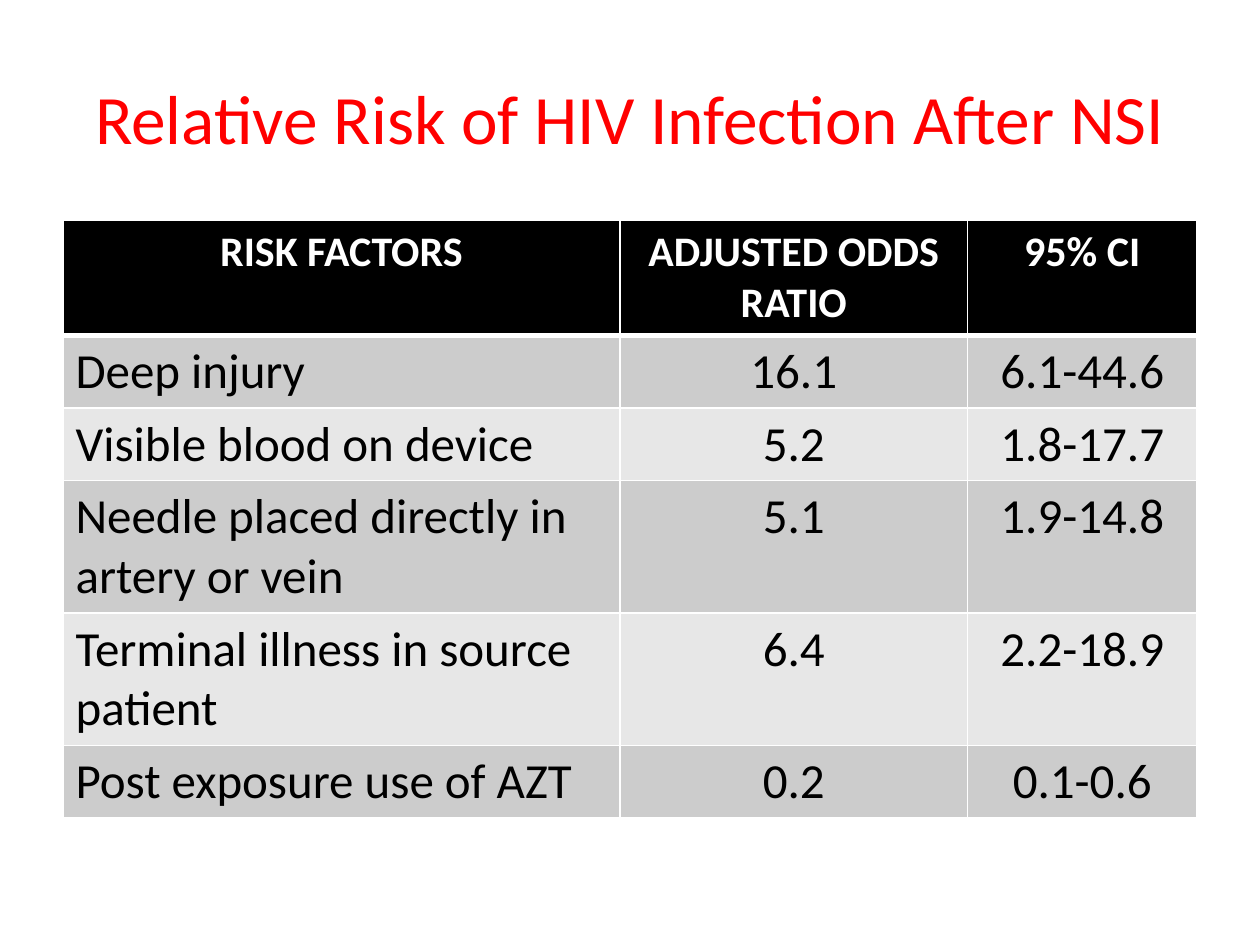
from dataclasses import dataclass

from lxml import etree
from pptx import Presentation
from pptx.dml.color import RGBColor
from pptx.enum import text
from pptx.oxml import ns
from pptx.table import _Cell
from pptx.util import Inches, Pt

FONT = "Calibri"
COLORS = {
    "title": "FF0000",
    "header": "000000",
    "band_dark": "CCCCCC",
    "band_light": "E7E7E7",
    "text": "000000",
    "white": "FFFFFF",
}
COLUMN_WIDTHS = (4.42, 2.76, 1.82)
ROW_HEIGHT = 0.41


@dataclass
class RiskFactor:
    name: str
    odds_ratio: str
    interval: str


HEADER = RiskFactor("RISK FACTORS", "ADJUSTED ODDS RATIO", "95% CI")
FACTORS = [
    RiskFactor("Deep injury", "16.1", "6.1-44.6"),
    RiskFactor("Visible blood on device", "5.2", "1.8-17.7"),
    RiskFactor("Needle placed directly in artery or vein", "5.1", "1.9-14.8"),
    RiskFactor("Terminal illness in source patient", "6.4", "2.2-18.9"),
    RiskFactor("Post exposure use of AZT", "0.2", "0.1-0.6"),
]


def rgb(name: str) -> RGBColor:
    return RGBColor.from_string(COLORS[name])


def set_borders(cell: _Cell, top: float, bottom: float) -> None:
    tcPr = cell._tc.get_or_add_tcPr()
    sides = (("L", 1), ("R", 1), ("T", top), ("B", bottom))
    for i, (side, width) in enumerate(sides):
        ln = etree.Element(ns.qn(f"a:ln{side}"), w=str(Pt(width)))
        fill = etree.SubElement(ln, ns.qn("a:solidFill"))
        etree.SubElement(fill, ns.qn("a:srgbClr"), val=COLORS["white"])
        tcPr.insert(i, ln)


def fill_cell(cell: _Cell, value: str, row: int, col: int) -> None:
    is_header = row == 0
    band = "band_dark" if row % 2 else "band_light"
    cell.fill.solid()
    cell.fill.fore_color.rgb = rgb("header" if is_header else band)
    set_borders(cell, 3 if row == 1 else 1, 3 if is_header else 1)
    cell.text = value
    p = cell.text_frame.paragraphs[0]
    centered = is_header or col > 0
    p.alignment = text.PP_ALIGN.CENTER if centered else text.PP_ALIGN.LEFT
    p.font.name = FONT
    p.font.size = Pt(24 if is_header else 28)
    p.font.bold = is_header
    p.font.color.rgb = rgb("white" if is_header else "text")


def main() -> None:
    prs = Presentation()
    prs.slide_width, prs.slide_height = Inches(10), Inches(7.5)
    s = prs.slides.add_slide(prs.slide_layouts[5])

    title = s.shapes.title
    title.left, title.top = Inches(0.5), Inches(0.3)
    title.width, title.height = Inches(9), Inches(1.25)
    tf = title.text_frame
    tf.text = "Relative Risk of HIV Infection After NSI"
    tf.vertical_anchor = text.MSO_ANCHOR.MIDDLE
    p = tf.paragraphs[0]
    p.alignment = text.PP_ALIGN.CENTER
    p.font.name = FONT
    p.font.size = Pt(39.6)
    p.font.color.rgb = rgb("title")

    records = [HEADER, *FACTORS]
    table = s.shapes.add_table(
        len(records), len(COLUMN_WIDTHS), Inches(0.5), Inches(1.75),
        Inches(sum(COLUMN_WIDTHS)), Inches(ROW_HEIGHT * len(records)),
    ).table
    for column, width in zip(table.columns, COLUMN_WIDTHS):
        column.width = Inches(width)
    for row, record in enumerate(records):
        values = (record.name, record.odds_ratio, record.interval)
        for col, value in enumerate(values):
            fill_cell(table.cell(row, col), value, row, col)

    prs.save("out.pptx")


if __name__ == "__main__":
    main()
